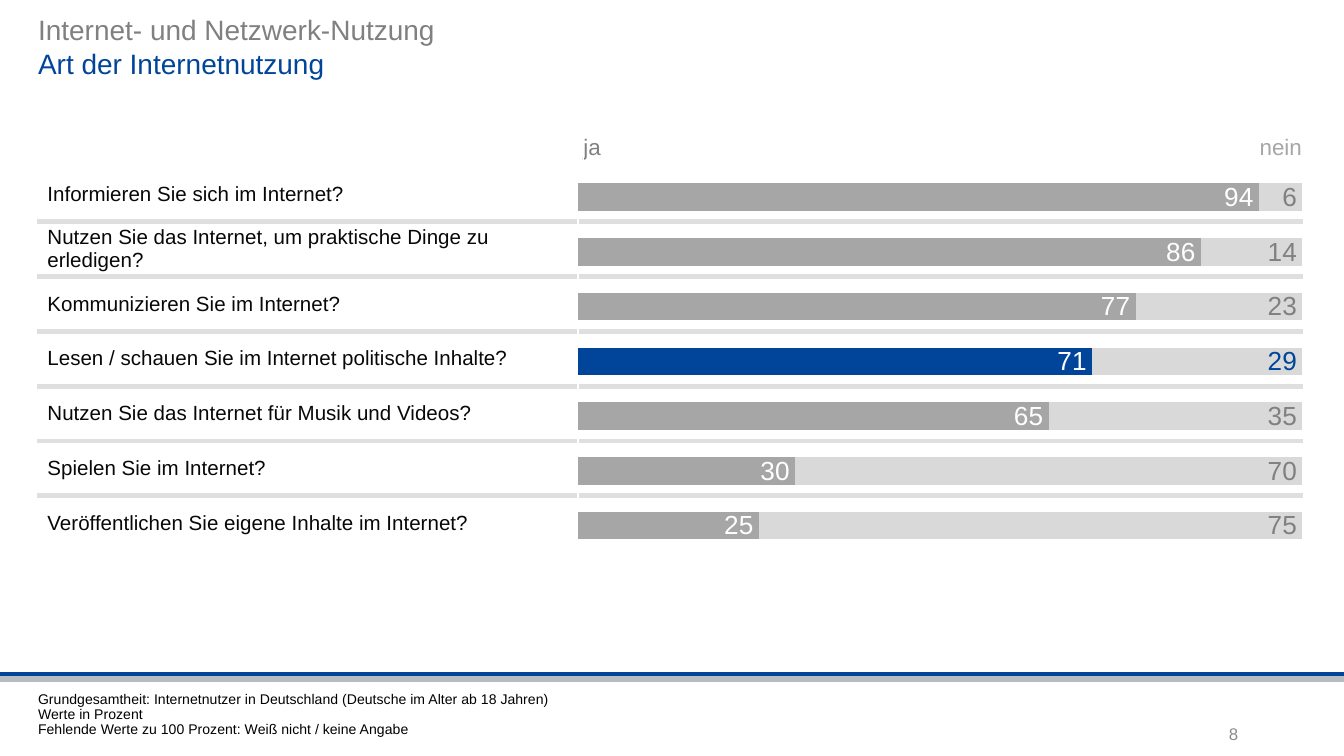
from pptx import Presentation
from pptx.chart.data import CategoryChartData
from pptx.dml.color import RGBColor
from pptx.enum.chart import XL_CHART_TYPE, XL_LABEL_POSITION, XL_TICK_LABEL_POSITION, XL_TICK_MARK
from pptx.enum.shapes import MSO_CONNECTOR
from pptx.enum.text import MSO_ANCHOR, PP_ALIGN
from pptx.oxml import parse_xml
from pptx.oxml.ns import nsdecls, qn
from pptx.oxml.xmlchemy import OxmlElement
from pptx.util import Pt

LEFT, RIGHT = PP_ALIGN.LEFT, PP_ALIGN.RIGHT
TOP, MIDDLE, BOTTOM = MSO_ANCHOR.TOP, MSO_ANCHOR.MIDDLE, MSO_ANCHOR.BOTTOM
STRAIGHT = MSO_CONNECTOR.STRAIGHT
BAR_STACKED = XL_CHART_TYPE.BAR_STACKED
INSIDE_END = XL_LABEL_POSITION.INSIDE_END
NO_LABELS, NO_TICKS = XL_TICK_LABEL_POSITION.NONE, XL_TICK_MARK.NONE

BLUE = RGBColor(0x00, 0x45, 0x99)
WHITE = RGBColor(0xFF, 0xFF, 0xFF)
BLACK = RGBColor(0x00, 0x00, 0x00)
INK = RGBColor(0x08, 0x08, 0x08)
GRAY = RGBColor(0x80, 0x80, 0x80)
PAGE_GRAY = RGBColor(0x8C, 0x8C, 0x8C)
BAR_GRAY = RGBColor(0xA6, 0xA6, 0xA6)
BAR_LIGHT = RGBColor(0xD9, 0xD9, 0xD9)
RULE_GRAY = RGBColor(0xDF, 0xDF, 0xDF)
BAND_GRAY = RGBColor(0xB7, 0xBC, 0xC1)

SLIDE_W, SLIDE_H = 720, 405
MARGIN = 20.4
HIGHLIGHT = 3
ANSWERS = [
    ("Informieren Sie sich im Internet?", 94, 6),
    ("Nutzen Sie das Internet, um praktische Dinge zu erledigen?", 86, 14),
    ("Kommunizieren Sie im Internet?", 77, 23),
    ("Lesen / schauen Sie im Internet politische Inhalte?", 71, 29),
    ("Nutzen Sie das Internet für Musik und Videos?", 65, 35),
    ("Spielen Sie im Internet?", 30, 70),
    ("Veröffentlichen Sie eigene Inhalte im Internet?", 25, 75),
]
FOOTNOTES = [
    "Grundgesamtheit: Internetnutzer in Deutschland (Deutsche im Alter ab 18 Jahren)",
    "Werte in Prozent",
    "Fehlende Werte zu 100 Prozent: Weiß nicht / keine Angabe",
]


class SlideBuilder:
    FONT = "Arial"

    def __init__(self, slide):
        self.shapes = slide.shapes

    def style(self, font, size, color):
        font.name, font.size = self.FONT, Pt(size)
        font.color.rgb = color

    def rule(self, y, color):
        line = self.shapes.add_connector(STRAIGHT, 0, Pt(y), Pt(SLIDE_W), Pt(y))
        line.line.color.rgb, line.line.width = color, Pt(3)
        line._element.spPr.append(OxmlElement("a:effectLst"))

    def text(self, box, lines, size, color, align=LEFT, anchor=TOP, spacing=None):
        tf = self.shapes.add_textbox(*map(Pt, box)).text_frame
        tf.word_wrap, tf.vertical_anchor = True, anchor
        tf.margin_left = tf.margin_right = tf.margin_top = tf.margin_bottom = 0
        for i, line in enumerate(lines):
            p = tf.paragraphs[0] if i == 0 else tf.add_paragraph()
            p.text, p.alignment, p.line_spacing = line, align, spacing
            self.style(p.font, size, color)

    def table(self, x, y, widths, height, rows):
        table = self.shapes.add_table(
            rows, len(widths), Pt(x), Pt(y), Pt(sum(widths)), Pt(height * rows)).table
        table.first_row = table.horz_banding = False
        for column, width in zip(table.columns, widths):
            column.width = Pt(width)
        for row in table.rows:
            row.height = Pt(height)
        return table

    def cell(self, cell, text, size, color, align, anchor, margin_x, margin_y):
        cell.margin_left = cell.margin_right = Pt(margin_x)
        cell.margin_top = cell.margin_bottom = Pt(margin_y)
        cell.vertical_anchor = anchor
        p = cell.text_frame.paragraphs[0]
        p.text, p.alignment = text, align
        self.style(p.font, size, color)

    def border(self, cell, side, color, width):
        """Draw one edge; must run before the cell's fill is set."""
        cell._tc.get_or_add_tcPr().append(parse_xml(
            f'<a:{side} {nsdecls("a")} w="{Pt(width)}"><a:solidFill>'
            f'<a:srgbClr val="{color}"/></a:solidFill></a:{side}>'))

    def questions(self, x, y, widths, height, questions):
        table = self.table(x, y, widths, height, len(questions))
        last = len(questions) - 1
        for i, question in enumerate(questions):
            for j in range(len(widths)):
                cell = table.cell(i, j)
                self.cell(cell, "" if j else question, 11, INK, LEFT, MIDDLE, 5, 0)
                if i:
                    self.border(cell, "lnT", RULE_GRAY, 3)
                if i < last:
                    self.border(cell, "lnB", RULE_GRAY, 3)
                cell.fill.solid()
                cell.fill.fore_color.rgb = WHITE

    def legend(self, x, y, width, height, entries):
        table = self.table(x, y, [width / len(entries)] * len(entries), height, 1)
        for cell, (label, color, align) in zip(table.rows[0].cells, entries):
            self.cell(cell, label, 12, color, align, BOTTOM, 0, 2.2)
            cell.fill.background()

    def chart(self, box, series, plot_area):
        """series holds (values, bar colour, label colour or None)."""
        data = CategoryChartData()
        data.categories = [str(n + 1) for n in range(len(series[0][0]))]
        for n, (values, _, _) in enumerate(series, 1):
            data.add_series(f"Series {n}", values)
        chart = self.shapes.add_chart(BAR_STACKED, *map(Pt, box), data).chart
        chart.has_legend = chart.has_title = False
        self.style(chart.font, 14, BLACK)
        plot = chart.plots[0]
        plot.gap_width, plot.overlap, plot.vary_by_categories = 100, 100, False
        for bars, (_, color, label_color) in zip(plot.series, series):
            bars.format.fill.solid()
            bars.format.fill.fore_color.rgb = color
            if label_color:
                labels = bars.data_labels
                labels.show_value, labels.position = True, INSIDE_END
                labels.number_format, labels.number_format_is_linked = "0", False
                self.style(labels.font, 14, label_color)

        axis = chart.category_axis
        axis.reverse_order = True
        axis.tick_label_position = NO_LABELS
        axis.major_tick_mark = axis.minor_tick_mark = NO_TICKS
        axis.format.line.color.rgb, axis.format.line.width = WHITE, Pt(1)
        axis = chart.value_axis
        axis.minimum_scale, axis.maximum_scale = 0, 100
        axis.has_major_gridlines = axis.visible = False
        self.place_plot(chart, plot_area)
        return plot

    def place_plot(self, chart, plot_area):
        area = chart.element.find(".//" + qn("c:plotArea"))
        for layout in area.findall(qn("c:layout")):
            area.remove(layout)
        modes = '<c:xMode val="edge"/><c:yMode val="edge"/>'
        sizes = "".join(f'<c:{k} val="{v}"/>' for k, v in zip("xywh", plot_area))
        area.insert(0, parse_xml(
            f'<c:layout {nsdecls("c")}><c:manualLayout><c:layoutTarget val="inner"/>'
            f"{modes}{sizes}</c:manualLayout></c:layout>"))

    def highlight(self, plot, index):
        yes, _, no = plot.series
        fill = yes.points[index].format.fill
        fill.solid()
        fill.fore_color.rgb = BLUE
        label = no.points[index].data_label
        self.style(label.font, 14, BLUE)
        label.position = INSIDE_END


def main():
    prs = Presentation()
    prs.slide_width, prs.slide_height = Pt(SLIDE_W), Pt(SLIDE_H)
    s = SlideBuilder(prs.slides.add_slide(prs.slide_layouts[6]))
    questions, yes, no = zip(*ANSWERS)

    s.rule(361.4, BLUE)
    s.rule(363.9, BAND_GRAY)
    s.text((MARGIN, 6.5, 677.5, 23.8), ["Internet- und Netzwerk-Nutzung"], 15, GRAY)
    s.questions(MARGIN, 89.3, [263.5, 377.3, 36.7], 29.4, questions)
    s.legend(312.5, 60.5, 385, 27.4, [("ja", GRAY, LEFT), ("nein", BAR_GRAY, RIGHT)])
    plot = s.chart(
        (298.8, 85.7, 411.8, 240.5),
        [(yes, BAR_GRAY, WHITE), ([0] * len(yes), WHITE, None), (no, BAR_LIGHT, GRAY)],
        (0.026, 0.022, 0.943, 0.854))
    s.highlight(plot, HIGHLIGHT)
    s.text((MARGIN, 370.8, 551.5, 29.5), FOOTNOTES, 7.5, BLACK, spacing=0.9)
    s.text((MARGIN, 25.2, 677.5, 48.2), ["Art der Internetnutzung"], 15, BLUE)
    s.text((508.3, 383.8, 155, 18.7), ["8"], 9, PAGE_GRAY, RIGHT, MIDDLE)
    prs.save("out.pptx")


if __name__ == "__main__":
    main()
